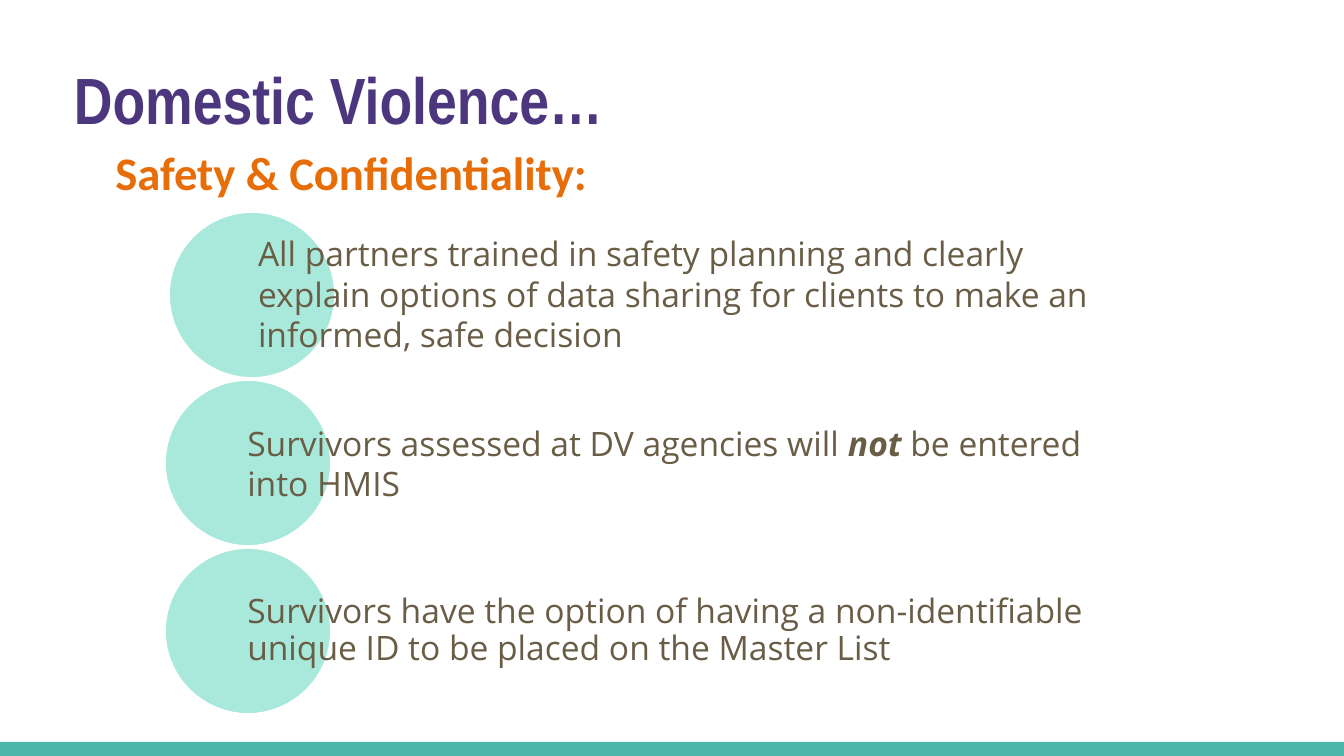
from lxml.etree import SubElement
from pptx import Presentation
from pptx.dml.color import RGBColor
from pptx.enum.shapes import MSO_SHAPE
from pptx.enum.text import MSO_ANCHOR, PP_ALIGN
from pptx.oxml.ns import qn
from pptx.util import Inches, Pt

TITLE = "Domestic Violence…"
SUBTITLE = "Safety & Confidentiality:"

# Circle left, text left, text width, rise of text above circle, line spacing,
# spans as (wording, emphasized)
POINTS = [
    (1.25, 1.92, 6.53, 0.02, 1.0, [
        ("All partners trained in safety planning and clearly explain options "
         "of data sharing for clients to make an informed, safe decision", False)]),
    (1.22, 1.84, 6.64, 0, 1.0, [
        ("Survivors assessed at DV agencies will ", False),
        ("not", True),
        (" be entered into HMIS", False)]),
    (1.22, 1.84, 6.64, 0, 0.9, [
        ("Survivors have the option of having a non-identifiable unique ID "
         "to be placed on the Master List", False)]),
]
FIRST_TOP = 1.57
DIAMETER = 1.25

THEME = {
    "title": ("Arial Narrow", 35, "4C367E"),
    "subtitle": ("Calibri", 25, "E76D09"),
    "point": ("Open Sans", 18, "695D46"),
    "circle": "52D5B9",
    "circle_line": "FFFFFF",
    "footer": "4DB6AC",
}


def place(shape, left, top, width, height):
    shape.left, shape.top = Inches(left), Inches(top)
    shape.width, shape.height = Inches(width), Inches(height)


def set_frame(frame, anchor, side, edge):
    frame.word_wrap = True
    frame.vertical_anchor = anchor
    frame.margin_left = frame.margin_right = Inches(side)
    frame.margin_top = frame.margin_bottom = Inches(edge)


def style(para, role, bold=False, before=0):
    name, size, color = THEME[role]
    para.alignment = PP_ALIGN.LEFT
    para.space_before, para.space_after = Pt(before), Pt(6)
    para.font.name, para.font.size, para.font.bold = name, Pt(size), bold
    para.font.color.rgb = RGBColor.from_string(color)


def add_heading(box, text, role):
    set_frame(box.text_frame, MSO_ANCHOR.TOP, 0.1, 0.1)
    para = box.text_frame.paragraphs[0]
    para.text = text
    style(para, role, bold=True, before=6)


def add_filled(page, kind, bounds, color):
    shape = page.shapes.add_shape(kind, *map(Inches, bounds))
    shape.shadow.inherit = False
    shape.fill.solid()
    shape.fill.fore_color.rgb = RGBColor.from_string(color)
    shape.line.fill.background()
    return shape


def add_circle(page, left, top):
    circle = add_filled(page, MSO_SHAPE.OVAL, (left, top, DIAMETER, DIAMETER),
                        THEME["circle"])
    circle.line.color.rgb = RGBColor.from_string(THEME["circle_line"])
    circle.line.width = Pt(2)
    fill_color = circle.fill._xPr.find(qn("a:solidFill"))[0]
    SubElement(fill_color, qn("a:alpha"), val="50000")


def add_point(page, bounds, spacing, spans):
    box = page.shapes.add_textbox(*map(Inches, bounds))
    set_frame(box.text_frame, MSO_ANCHOR.MIDDLE, 0, 0.03)
    para = box.text_frame.paragraphs[0]
    style(para, "point")
    para.line_spacing = spacing
    for wording, emphasized in spans:
        span = para.add_run()
        span.text = wording
        if emphasized:
            span.font.bold = span.font.italic = True


def main():
    deck = Presentation()
    deck.slide_width = Inches(10)
    deck.slide_height = deck.slide_width * 9 // 16
    page = deck.slides.add_slide(deck.slide_layouts[5])

    add_filled(page, MSO_SHAPE.RECTANGLE, (0, 5.52, 10, 0.11), THEME["footer"])
    title = page.shapes.title
    place(title, 0.45, 0.34, 9.32, 0.77)
    add_heading(title, TITLE, "title")
    subtitle = page.shapes.add_textbox(*map(Inches, (0.76, 0.97, 9.32, 3.61)))
    add_heading(subtitle, SUBTITLE, "subtitle")

    for index, (circle_left, text_left, width, rise, spacing, spans) in enumerate(POINTS):
        top = FIRST_TOP + index * DIAMETER
        add_circle(page, circle_left, top)
        add_point(page, (text_left, top - rise, width, DIAMETER + rise), spacing, spans)

    deck.save("out.pptx")


if __name__ == "__main__":
    main()
